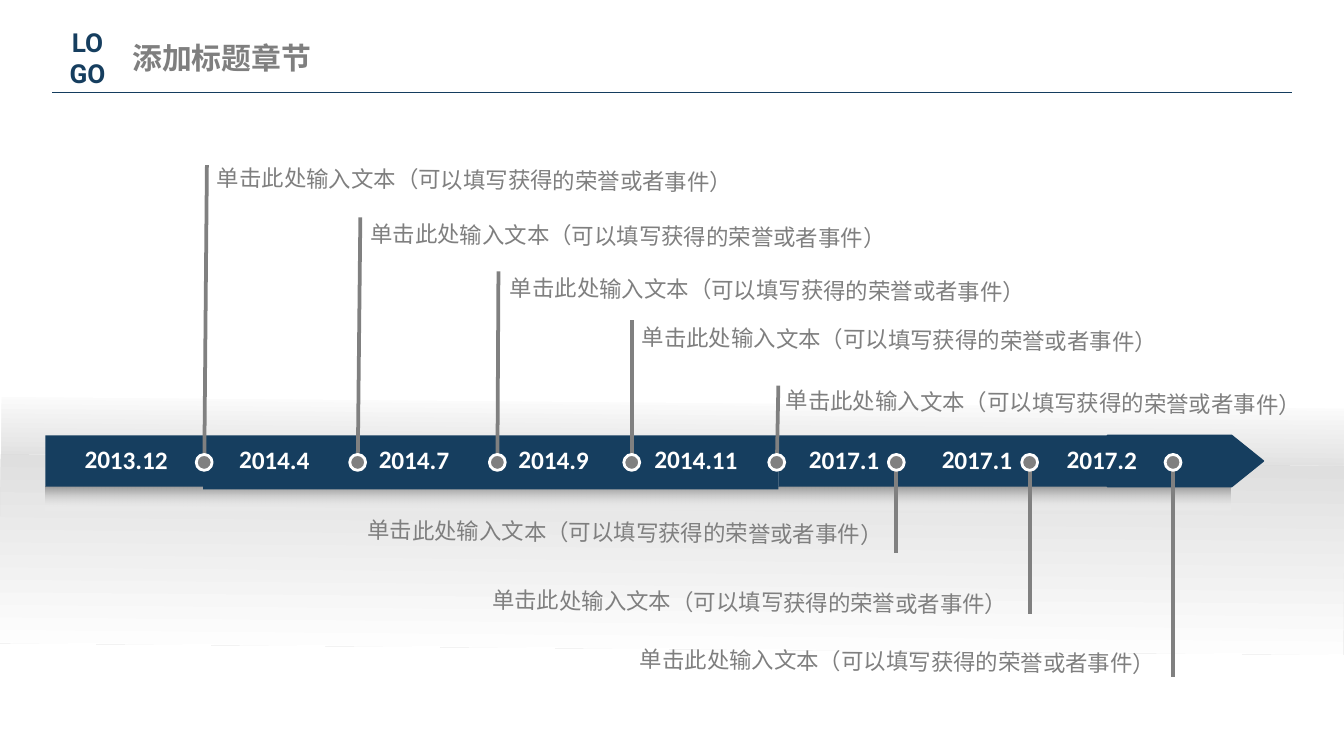
from dataclasses import dataclass

from lxml.etree import SubElement
from pptx import Presentation
from pptx.dml.color import RGBColor
from pptx.enum.shapes import MSO_CONNECTOR as CONNECTOR, MSO_SHAPE as SHAPE
from pptx.enum.text import MSO_ANCHOR as ANCHOR, MSO_AUTO_SIZE as AUTO_SIZE, PP_ALIGN as ALIGN
from pptx.oxml.ns import qn
from pptx.util import Cm, Pt

NAVY = RGBColor(0x16, 0x3E, 0x5F)
RULE_NAVY = RGBColor(0x14, 0x3D, 0x5F)
TEXT_GRAY = RGBColor(0x7F, 0x7F, 0x7F)
STEM_GRAY = RGBColor(0x80, 0x80, 0x80)
BAND_GRAY = RGBColor(0xDD, 0xDD, 0xDD)
SHADE_GRAY = RGBColor(0x96, 0x96, 0x96)
WHITE = RGBColor(0xFF, 0xFF, 0xFF)

TILT = 0.5
MARKER_Y, MARKER_SIZE = 8.74, 0.3
BAR_TOP, BAR_HEIGHT = 8.23, 0.97
NOTE = "单击此处输入文本（可以填写获得的荣誉或者事件）"


@dataclass
class Event:
    """A dated event; positions in cm."""
    date: str
    date_left: float
    stem_x: float
    tip_x: float
    tip_y: float
    note_left: float
    note_top: float

    @property
    def above(self):
        return self.tip_y < MARKER_Y


EVENTS = [
    Event("2013.12", 1.35, 3.86, 3.91, 3.12, 3.91, 2.95),
    Event("2014.4", 4.27, 6.76, 6.81, 4.11, 6.81, 4.01),
    Event("2014.7", 6.91, 9.40, 9.42, 5.13, 9.45, 5.03),
    Event("2014.9", 9.55, 11.94, 11.94, 6.05, 11.94, 5.97),
    Event("2014.11", 12.12, 14.68, 14.71, 7.29, 14.66, 7.16),
    Event("2017.1", 15.04, 16.94, 16.94, 10.46, 6.38, 9.60),
    Event("2017.1", 17.55, 19.46, 19.46, 11.61, 8.74, 10.92),
    Event("2017.2", 19.91, 22.17, 22.17, 12.80, 11.53, 12.04),
]


@dataclass
class TimelineSlide:
    slide: object
    font: str = "Calibri"

    def place(self, shape, left, top, width, height):
        shape.left, shape.top = Cm(left), Cm(top)
        shape.width, shape.height = Cm(width), Cm(height)

    def add_lines(self, frame, lines, size, color, font=None, bold=False,
                  align=ALIGN.LEFT, spacing=None):
        """Fill the frame with one paragraph per line; return the last run."""
        for index, line in enumerate(lines):
            paragraph = frame.add_paragraph() if index else frame.paragraphs[0]
            paragraph.alignment = align
            if spacing:
                paragraph.line_spacing = spacing
            run = paragraph.add_run()
            run.text = line
            run.font.name = font or self.font
            run.font.size = Pt(size)
            run.font.bold = bold
            run.font.color.rgb = color
        return run

    def title(self, text, box, font):
        heading = self.slide.shapes.title
        self.place(heading, *box)
        frame = heading.text_frame
        frame.auto_size = AUTO_SIZE.NONE
        frame.vertical_anchor = ANCHOR.MIDDLE
        frame.margin_left = frame.margin_right = Cm(0.19)
        frame.margin_top = frame.margin_bottom = 0
        run = self.add_lines(frame, [text], 16, TEXT_GRAY, font, bold=True)
        SubElement(run.font._element, qn("a:ea")).set("typeface", font)

    def text(self, lines, box, size, color, tilt=0, wrap=True,
             anchor=ANCHOR.TOP, margins=(0.25, 0.13), **style):
        label = self.slide.shapes.add_textbox(*map(Cm, box))
        label.rotation = tilt
        frame = label.text_frame
        frame.word_wrap = wrap
        frame.vertical_anchor = anchor
        frame.margin_left = frame.margin_right = Cm(margins[0])
        frame.margin_top = frame.margin_bottom = Cm(margins[1])
        self.add_lines(frame, lines, size, color, **style)

    def shape(self, kind, box, fill=None, line=None, line_width=0.75, tilt=0):
        figure = self.slide.shapes.add_shape(kind, *map(Cm, box))
        figure.shadow.inherit = False
        figure.rotation = tilt
        if fill is not None:
            figure.fill.solid()
            figure.fill.fore_color.rgb = fill
        if line is None:
            figure.line.fill.background()
        else:
            figure.line.color.rgb = line
            figure.line.width = Pt(line_width)
        return figure

    def gradient(self, box, top_color, bottom_color, tilt=0, fade=False):
        """Vertical gradient; fade makes the bottom colour transparent."""
        band = self.shape(SHAPE.RECTANGLE, box, tilt=tilt)
        band.fill.gradient()
        band.fill.gradient_angle = 270
        for stop, color in zip(band.fill.gradient_stops, (top_color, bottom_color)):
            stop.color.rgb = color
        if fade:
            last_color = band._element.spPr.findall(".//" + qn("a:srgbClr"))[-1]
            SubElement(last_color, qn("a:alpha")).set("val", "0")

    def line(self, start, end, color, width):
        stroke = self.slide.shapes.add_connector(
            CONNECTOR.STRAIGHT, *map(Cm, start + end))
        stroke.line.color.rgb = color
        stroke.line.width = Pt(width)
        SubElement(stroke._element.spPr, qn("a:effectLst"))

    def date(self, event):
        width = 2.11 if len(event.date) > 6 else 1.85
        self.text([event.date], (event.date_left, 8.26, width, 0.84), 13.5, WHITE,
                  tilt=TILT, wrap=False, anchor=ANCHOR.MIDDLE, bold=True)

    def marker(self, event):
        stem_start = MARKER_Y + (0.12 if event.above else -0.15)
        self.line((event.stem_x, stem_start), (event.tip_x, event.tip_y), STEM_GRAY, 2)
        corner = event.stem_x - MARKER_SIZE / 2, MARKER_Y - MARKER_SIZE / 2
        self.shape(SHAPE.FLOWCHART_CONNECTOR, (*corner, MARKER_SIZE, MARKER_SIZE),
                   STEM_GRAY, WHITE, 1.5, tilt=TILT)

    def note(self, event):
        width, align = (12.5, ALIGN.LEFT) if event.above else (10.49, ALIGN.RIGHT)
        self.text([NOTE], (event.note_left, event.note_top, width, 0.81), 12, TEXT_GRAY,
                  tilt=TILT, margins=(0.19, 0.1), align=align, spacing=1.2)


def main():
    deck = Presentation()
    deck.slide_width, deck.slide_height = Cm(25.4), Cm(14.29)
    page = TimelineSlide(deck.slides.add_slide(deck.slide_layouts[5]))

    page.gradient((0, 8.69, 25.4, 3.58), BAND_GRAY, WHITE, tilt=TILT)
    page.gradient((0.03, 7.62, 25.37, 1.07), WHITE, BAND_GRAY, tilt=TILT)
    page.gradient((0.86, 9.19, 22.4, 0.46), SHADE_GRAY, WHITE, fade=True)

    arrow = page.shape(SHAPE.PENTAGON, (20.93, BAR_TOP, 2.95, BAR_HEIGHT), NAVY, NAVY)
    arrow.adjustments[0] = 0.62
    for left, width, height in [(14.71, 7.92, BAR_HEIGHT), (3.84, 10.87, 1.02),
                                (0.86, 3, BAR_HEIGHT)]:
        page.shape(SHAPE.RECTANGLE, (left, BAR_TOP, width, height), NAVY)

    for draw in (page.date, page.marker, page.note):
        for event in EVENTS:
            draw(event)

    page.line((0.99, 1.75), (24.41, 1.75), RULE_NAVY, 0.75)
    page.title("添加标题章节", (2.31, 0.61, 4.72, 0.94), "Noto Sans CJK SC")
    page.text(["LO", "GO"], (0.79, 0.36, 1.73, 1.45), 14, NAVY,
              font="Roboto", bold=True, align=ALIGN.CENTER)

    deck.save("out.pptx")


if __name__ == "__main__":
    main()
